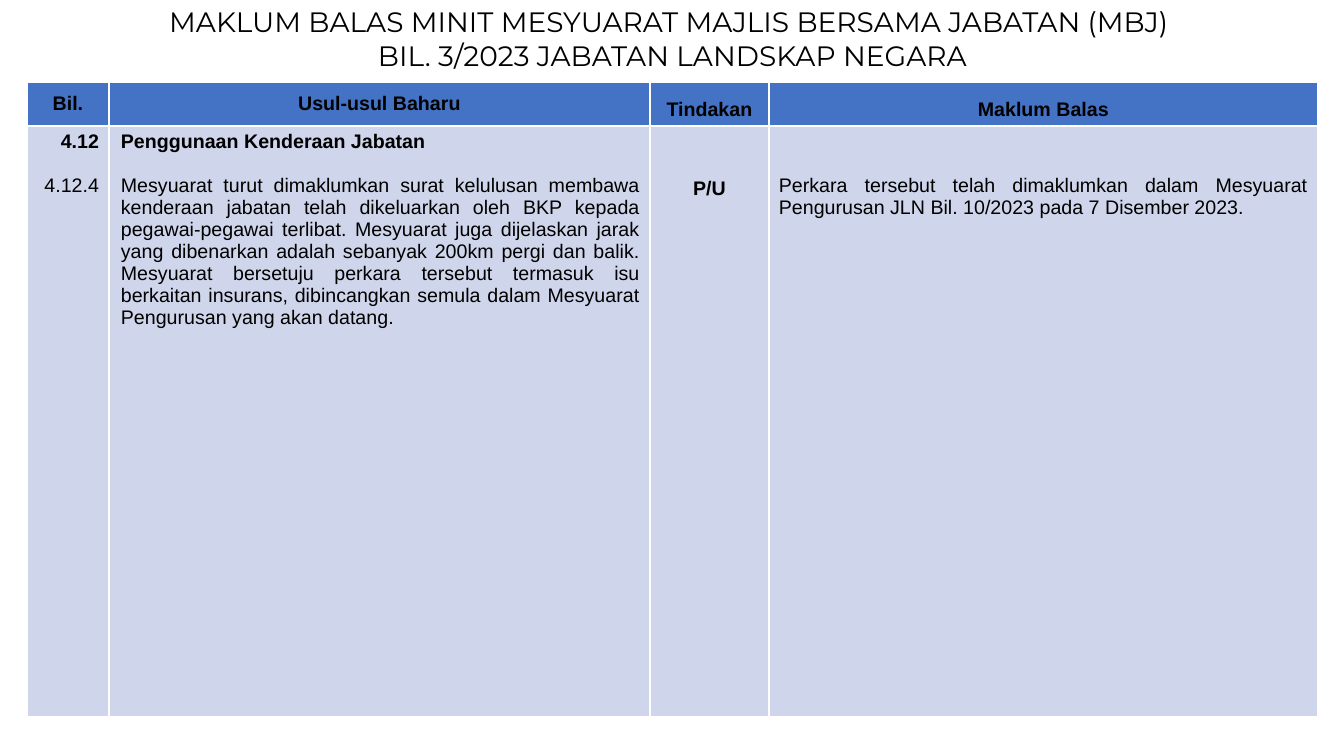
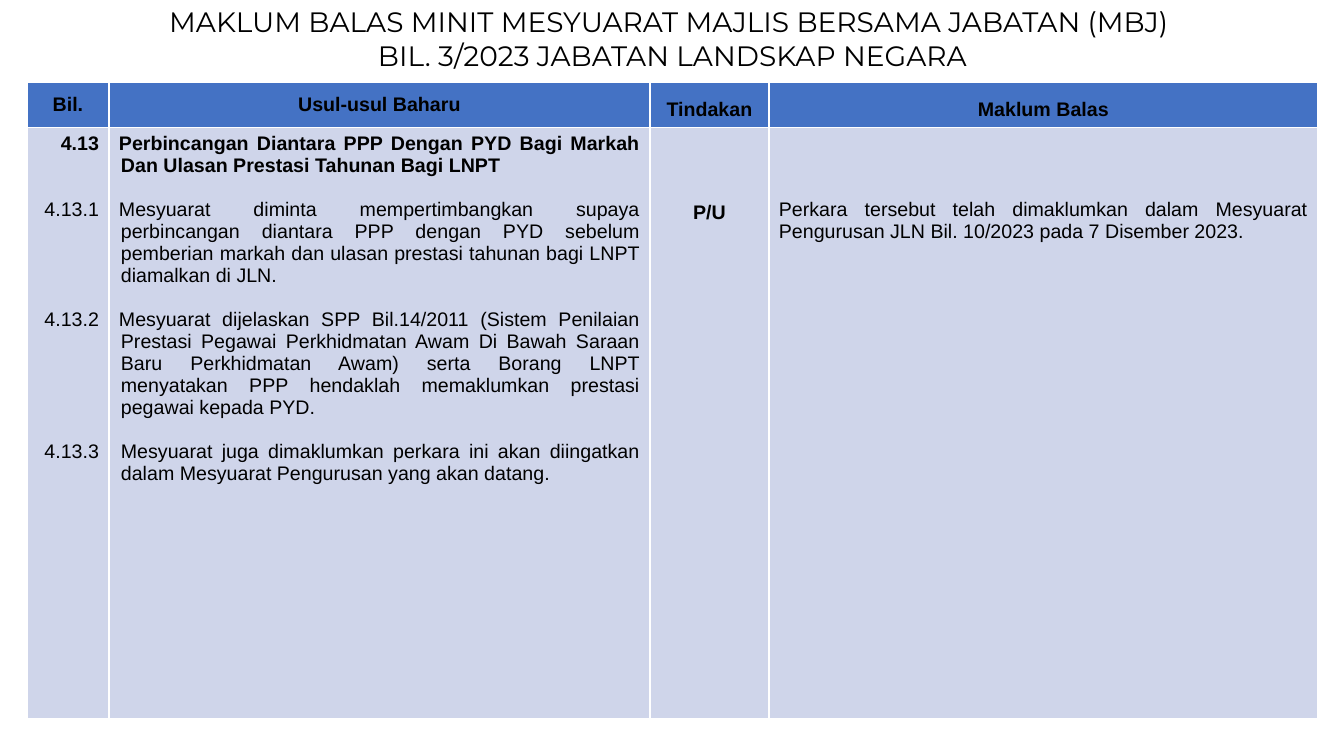
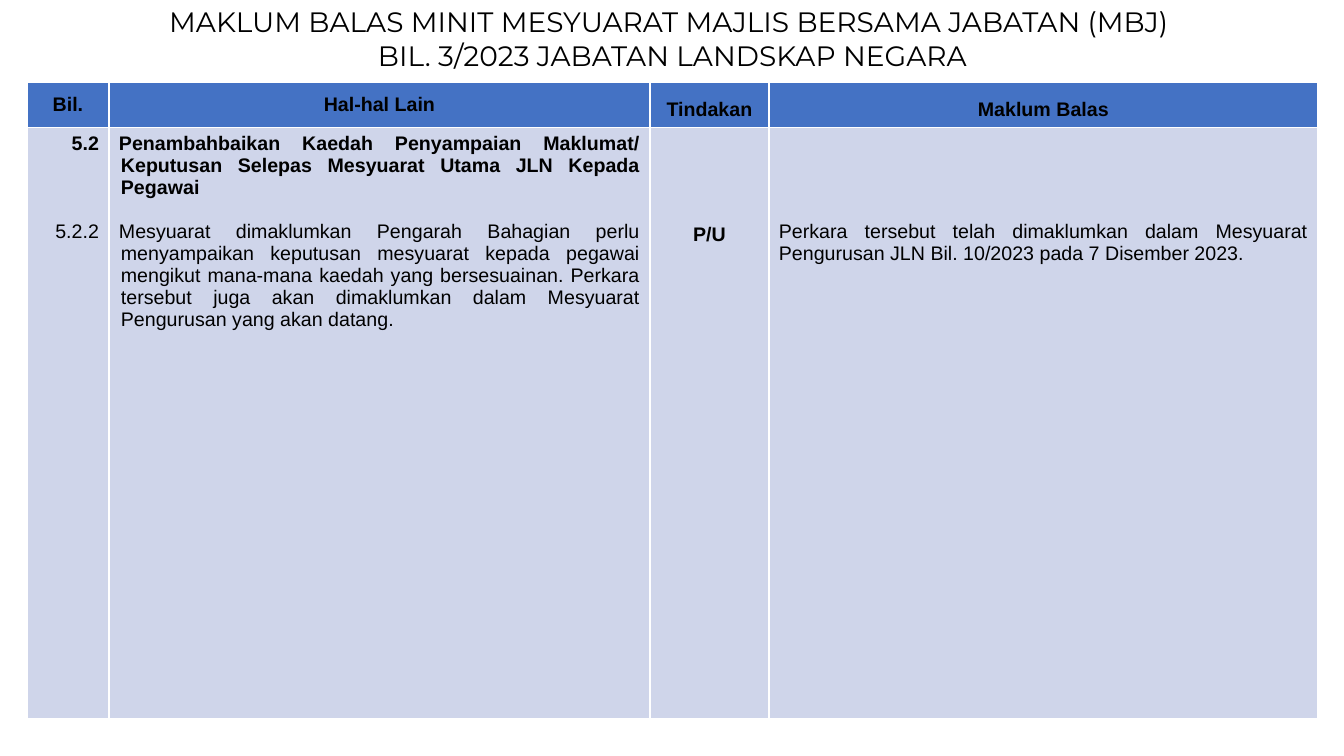
"""Build the three feedback slides of the joint council minutes."""
from dataclasses import dataclass

from lxml.etree import SubElement
from pptx import Presentation
from pptx.dml.color import RGBColor
from pptx.enum.text import MSO_ANCHOR, MSO_AUTO_SIZE, PP_ALIGN
from pptx.oxml.ns import qn
from pptx.util import Emu, Pt

SCALE = 914400 / 100.8
WIDE, HIGH = 1344, 756
LEFT, TOP = 27, 82
COLS = (82, 541, 119, 549)
ROWS = (44, 591)
SIDE, EDGE, LINE, HANG = 10, 5, 22, 2
BLUE, PALE, WHITE, BLACK = "4472C4", "CFD5EA", "FFFFFF", "000000"
TITLE = (
    "MAKLUM BALAS MINIT MESYUARAT MAJLIS BERSAMA JABATAN (MBJ) ",
    "BIL. 3/2023 JABATAN LANDSKAP NEGARA",
)
REPLY = (
    "Perkara tersebut telah dimaklumkan dalam Mesyuarat "
    "Pengurusan JLN Bil. 10/2023 pada 7 Disember 2023."
)


@dataclass(frozen=True)
class Para:
    """One paragraph, with the number of free lines above it."""
    text: str
    gap: int = 0
    bold: bool = False
    inset: int = 0
    hang: int = 0
    space: float | None = None


@dataclass(frozen=True)
class Item:
    """One numbered point; depth is how many lines its text fills."""
    code: str
    text: str
    depth: int
    hang: int = HANG


@dataclass(frozen=True)
class Page:
    """One slide: column heading, topic and its points."""
    head: str
    topic: Item
    items: tuple[Item, ...]


PAGES = (
    Page(
        "Usul-usul Baharu",
        Item("4.12", "Penggunaan Kenderaan Jabatan", 1, 0),
        (Item(
            "4.12.4",
            "Mesyuarat turut dimaklumkan surat kelulusan membawa kenderaan "
            "jabatan telah dikeluarkan oleh BKP kepada pegawai-pegawai "
            "terlibat. Mesyuarat juga dijelaskan jarak yang dibenarkan adalah "
            "sebanyak 200km pergi dan balik. Mesyuarat bersetuju perkara "
            "tersebut termasuk isu berkaitan insurans, dibincangkan semula "
            "dalam Mesyuarat Pengurusan yang akan datang.", 7, 0),),
    ),
    Page(
        "Usul-usul Baharu",
        Item("4.13", "Perbincangan Diantara PPP Dengan PYD Bagi Markah Dan "
             "Ulasan Prestasi Tahunan Bagi LNPT", 2),
        (
            Item(
                "4.13.1",
                "Mesyuarat diminta mempertimbangkan supaya perbincangan "
                "diantara PPP dengan PYD sebelum pemberian markah dan ulasan "
                "prestasi tahunan bagi LNPT diamalkan di JLN.", 4),
            Item(
                "4.13.2",
                "Mesyuarat dijelaskan SPP Bil.14/2011 (Sistem Penilaian "
                "Prestasi Pegawai Perkhidmatan Awam Di Bawah Saraan Baru "
                "Perkhidmatan Awam) serta Borang LNPT menyatakan PPP hendaklah "
                "memaklumkan prestasi pegawai kepada PYD.", 5),
            Item(
                "4.13.3",
                "Mesyuarat juga dimaklumkan perkara ini akan diingatkan dalam "
                "Mesyuarat Pengurusan yang akan datang.", 2, 0),
        ),
    ),
    Page(
        "Hal-hal Lain",
        Item("5.2", "Penambahbaikan Kaedah Penyampaian Maklumat/ Keputusan "
             "Selepas Mesyuarat Utama JLN Kepada Pegawai", 3),
        (Item(
            "5.2.2",
            "Mesyuarat dimaklumkan Pengarah Bahagian perlu menyampaikan "
            "keputusan mesyuarat kepada pegawai mengikut mana-mana kaedah yang "
            "bersesuainan. Perkara tersebut juga akan dimaklumkan dalam "
            "Mesyuarat Pengurusan yang akan datang.", 5),),
    ),
)


def px(num: int) -> Emu:
    """Turn px into EMU."""
    return Emu(round(num * SCALE))


def tint(code: str) -> RGBColor:
    """Turn a hex string into a colour."""
    return RGBColor.from_string(code)


def write(frame, paras: list[Para], align, face: str, size: int) -> None:
    """Write paragraphs into a text frame."""
    for rank, para in enumerate(paras):
        line = frame.add_paragraph() if rank else frame.paragraphs[0]
        line.alignment = align
        if para.gap:
            line.space_before = px(para.gap * LINE)
        if para.space:
            line.line_spacing = para.space
        if para.inset:
            props = line._p.get_or_add_pPr()
            props.set("marL", str(px(para.inset)))
            props.set("indent", str(-px(para.hang)))
        run = line.add_run()
        run.text = para.text
        font = run.font
        font.name, font.size, font.bold = face, Pt(size), para.bold
        font.color.rgb = tint(BLACK)


def fill(cell, paras: list[Para], align, shade: str, top: int = EDGE) -> None:
    """Give a cell its borders, fill, margins and text."""
    props = cell._tc.get_or_add_tcPr()
    for name in ("a:lnL", "a:lnR", "a:lnT", "a:lnB"):
        rule = SubElement(props, qn(name), w=str(Pt(1)))
        SubElement(SubElement(rule, qn("a:solidFill")), qn("a:srgbClr"), val=WHITE)
    cell.fill.solid()
    cell.fill.fore_color.rgb = tint(shade)
    cell.margin_left = cell.margin_right = px(SIDE)
    cell.margin_top, cell.margin_bottom = px(top), px(EDGE)
    write(cell.text_frame, paras, align, "Arial", 14)


def add_title(slide) -> None:
    """Add the shared title."""
    frame = slide.shapes.add_textbox(px(69), 0, px(1207), px(78)).text_frame
    frame.word_wrap = True
    frame.auto_size = MSO_AUTO_SIZE.SHAPE_TO_FIT_TEXT
    write(frame, [Para(text) for text in TITLE], PP_ALIGN.CENTER, "Montserrat", 20)


def add_grid(slide, page: Page) -> None:
    """Add the table of points and replies."""
    grid = slide.shapes.add_table(
        len(ROWS), len(COLS), px(LEFT), px(TOP), px(sum(COLS)), px(sum(ROWS))
    ).table
    for col, width in zip(grid.columns, COLS):
        col.width = px(width)
    for row, height in zip(grid.rows, ROWS):
        row.height = px(height)

    heads = (("Bil.", None), (page.head, None), ("Tindakan", 1.5), ("Maklum Balas", 1.5))
    for rank, (text, space) in enumerate(heads):
        cell = grid.cell(0, rank)
        cell.vertical_anchor = MSO_ANCHOR.MIDDLE
        fill(cell, [Para(text, bold=True, space=space)], PP_ALIGN.CENTER, BLUE)

    points = (page.topic, *page.items)
    gaps = (0, *(point.depth for point in points[:-1]))
    codes = [Para(point.code, gap, not rank)
             for rank, (point, gap) in enumerate(zip(points, gaps))]
    texts = [Para(point.text, min(rank, 1), not rank, HANG, point.hang)
             for rank, point in enumerate(points)]
    start = EDGE + (page.topic.depth + 1) * LINE
    fill(grid.cell(1, 0), codes, PP_ALIGN.RIGHT, PALE)
    fill(grid.cell(1, 1), texts, PP_ALIGN.JUSTIFY, PALE)
    fill(grid.cell(1, 2), [Para("P/U", bold=True)], PP_ALIGN.CENTER, PALE, start + 3)
    fill(grid.cell(1, 3), [Para(REPLY)], PP_ALIGN.JUSTIFY, PALE, start)


def main() -> None:
    """Build and save the deck."""
    deck = Presentation()
    deck.slide_width, deck.slide_height = px(WIDE), px(HIGH)
    for page in PAGES:
        slide = deck.slides.add_slide(deck.slide_layouts[6])
        add_grid(slide, page)
        add_title(slide)
    deck.save("out.pptx")


if __name__ == "__main__":
    main()
